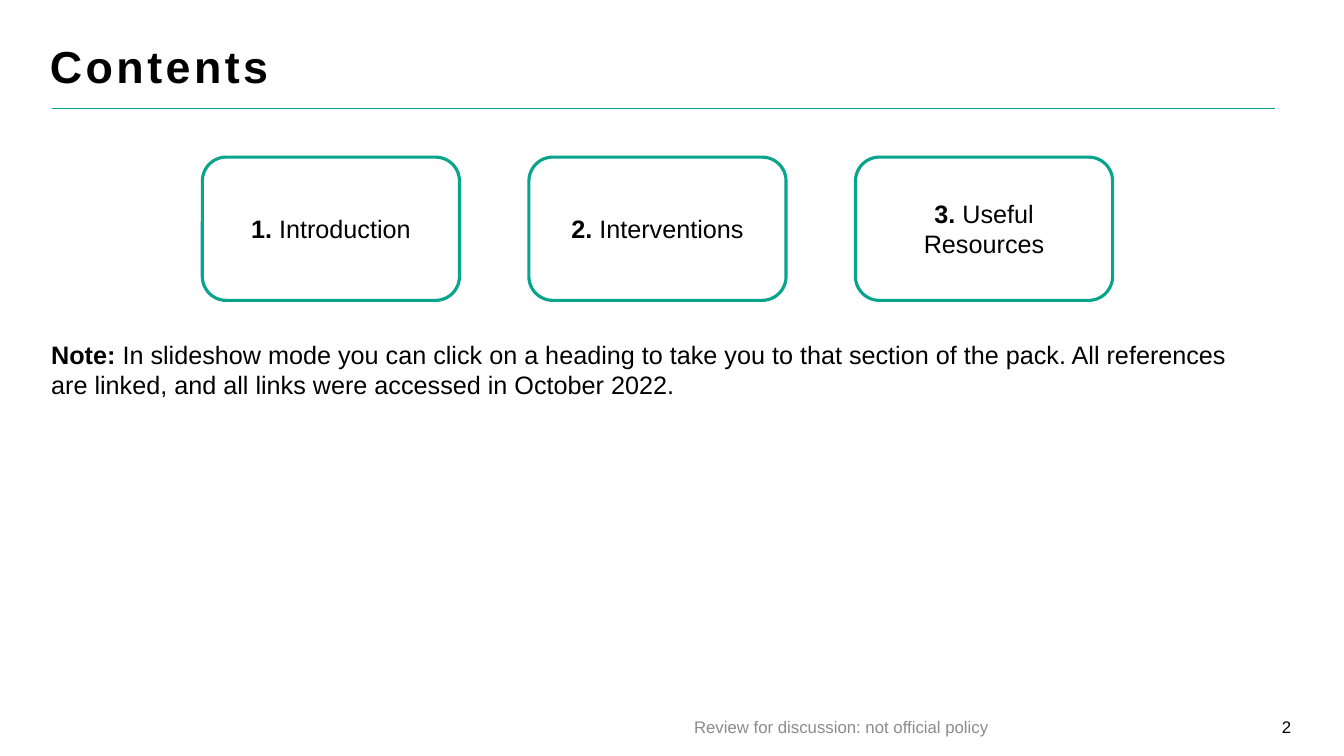
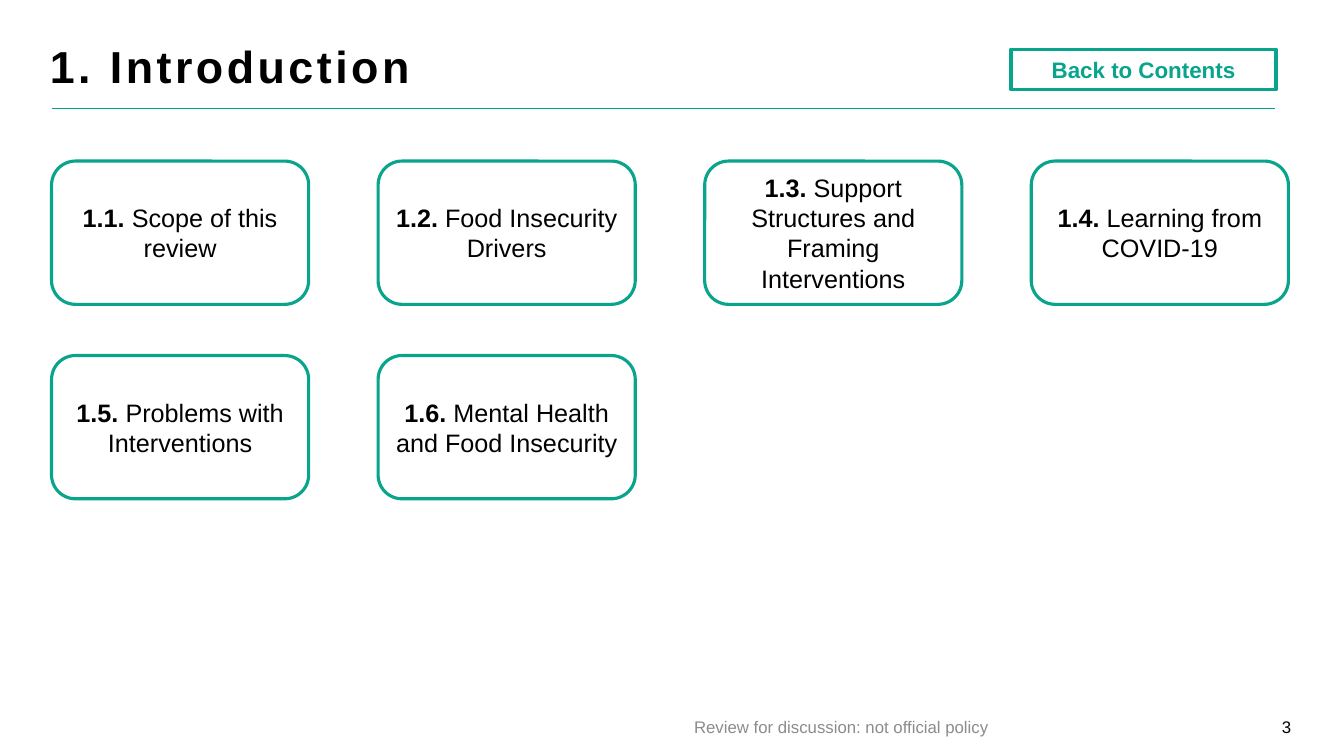
import pptx
import pptx.util
import pptx.dml.color
import pptx.enum.shapes
import pptx.enum.text
import lxml.etree
from pptx.util import Cm

BLACK = pptx.dml.color.RGBColor(0x00, 0x00, 0x00)
GREY = pptx.dml.color.RGBColor(0x8C, 0x8C, 0x8C)
GREEN = pptx.dml.color.RGBColor(0x08, 0xA4, 0x8C)
RULE_GREEN = pptx.dml.color.RGBColor(0x01, 0xA1, 0x88)
ALIGN = pptx.enum.text.PP_ALIGN
ANCHOR = pptx.enum.text.MSO_ANCHOR
SHAPE = pptx.enum.shapes.MSO_SHAPE

MARGIN = 1.3
CARD_WIDTH, CARD_HEIGHT = 6.48, 3.61
COLUMN_STEP, ROW_STEP = 8.23, 4.9
COLUMNS = 4
FOOTER_TOP, FOOTER_HEIGHT = 17.65, 1.02

PAGES = [
    {
        "title": "Contents",
        "number": 2,
        "left": 5.1,
        "top": 3.96,
        "cards": [("1. ", "Introduction"), ("2. ", "Interventions"), ("3. ", "Useful Resources")],
        "note": (
            "Note: ",
            "In slideshow mode you can click on a heading to take you to that section of the pack. "
            "All references are linked, and all links were accessed in October 2022.",
        ),
    },
    {
        "title": "1. Introduction",
        "number": 3,
        "left": MARGIN,
        "top": 4.06,
        "cards": [
            ("1.1. ", "Scope of this review"),
            ("1.2. ", "Food Insecurity Drivers"),
            ("1.3. ", "Support Structures and Framing Interventions"),
            ("1.4. ", "Learning from COVID-19"),
            ("1.5. ", "Problems with Interventions"),
            ("1.6. ", "Mental Health and Food Insecurity"),
        ],
        "back": "Back to Contents",
    },
]


def write(shape, bold, plain, size, color, align, anchor):
    frame = shape.text_frame
    frame.word_wrap = True
    frame.vertical_anchor = anchor
    para = frame.paragraphs[0]
    para.alignment = align
    for text, is_bold in ((bold, True), (plain, False)):
        if text:
            span = para.add_run()
            span.text = text
            span.font.name = "Arial"
            span.font.size = pptx.util.Pt(size)
            span.font.bold = is_bold
            span.font.color.rgb = color


def add_outline(page, kind, left, top, width, height):
    box = page.shapes.add_shape(kind, Cm(left), Cm(top), Cm(width), Cm(height))
    box.shadow.inherit = False
    box.fill.background()
    box.line.color.rgb = GREEN
    box.line.width = pptx.util.Pt(2.25)
    return box


deck = pptx.Presentation()
deck.slide_width = Cm(33.87)
deck.slide_height = Cm(19.05)

for content in PAGES:
    page = deck.slides.add_slide(deck.slide_layouts[5])

    title = page.shapes.title
    title.left, title.top, title.width, title.height = Cm(1), Cm(1), Cm(31.8), Cm(1.5)
    write(title, content["title"], "", 32, BLACK, ALIGN.LEFT, ANCHOR.TOP)
    title.text_frame.auto_size = pptx.enum.text.MSO_AUTO_SIZE.NONE
    heading = title.text_frame.paragraphs[0]
    heading.line_spacing = 0.9
    heading.runs[0].font._element.set("spc", "250")

    rule = page.shapes.add_connector(
        pptx.enum.shapes.MSO_CONNECTOR.STRAIGHT, Cm(MARGIN), Cm(2.72), Cm(32.13), Cm(2.72)
    )
    rule.line.color.rgb = RULE_GREEN
    rule.line.width = pptx.util.Pt(0.5)
    lxml.etree.SubElement(rule._element.spPr, pptx.oxml.ns.qn("a:effectLst"))

    for index, (number, label) in enumerate(content["cards"]):
        row, column = divmod(index, COLUMNS)
        card = add_outline(
            page,
            SHAPE.ROUNDED_RECTANGLE,
            content["left"] + column * COLUMN_STEP,
            content["top"] + row * ROW_STEP,
            CARD_WIDTH,
            CARD_HEIGHT,
        )
        write(card, number, label, 18, BLACK, ALIGN.CENTER, ANCHOR.MIDDLE)

    if "note" in content:
        note = page.shapes.add_textbox(Cm(1.04), Cm(8.43), Cm(31.12), Cm(1.8))
        write(note, *content["note"], 18, BLACK, ALIGN.LEFT, ANCHOR.TOP)

    if "back" in content:
        button = add_outline(page, SHAPE.RECTANGLE, 25.48, 1.24, 6.68, 1.02)
        write(button, content["back"], "", 16, GREEN, ALIGN.CENTER, ANCHOR.MIDDLE)

    for text, left, width, color, align in (
        ("Review for discussion: not official policy", 12.34, 17.73, GREY, ALIGN.CENTER),
        (str(content["number"]), 30.68, 2.11, BLACK, ALIGN.RIGHT),
    ):
        footer = page.shapes.add_textbox(Cm(left), Cm(FOOTER_TOP), Cm(width), Cm(FOOTER_HEIGHT))
        footer.text_frame.margin_top = footer.text_frame.margin_bottom = Cm(0.1)
        write(footer, "", text, 12, color, align, ANCHOR.BOTTOM)

deck.save("out.pptx")
